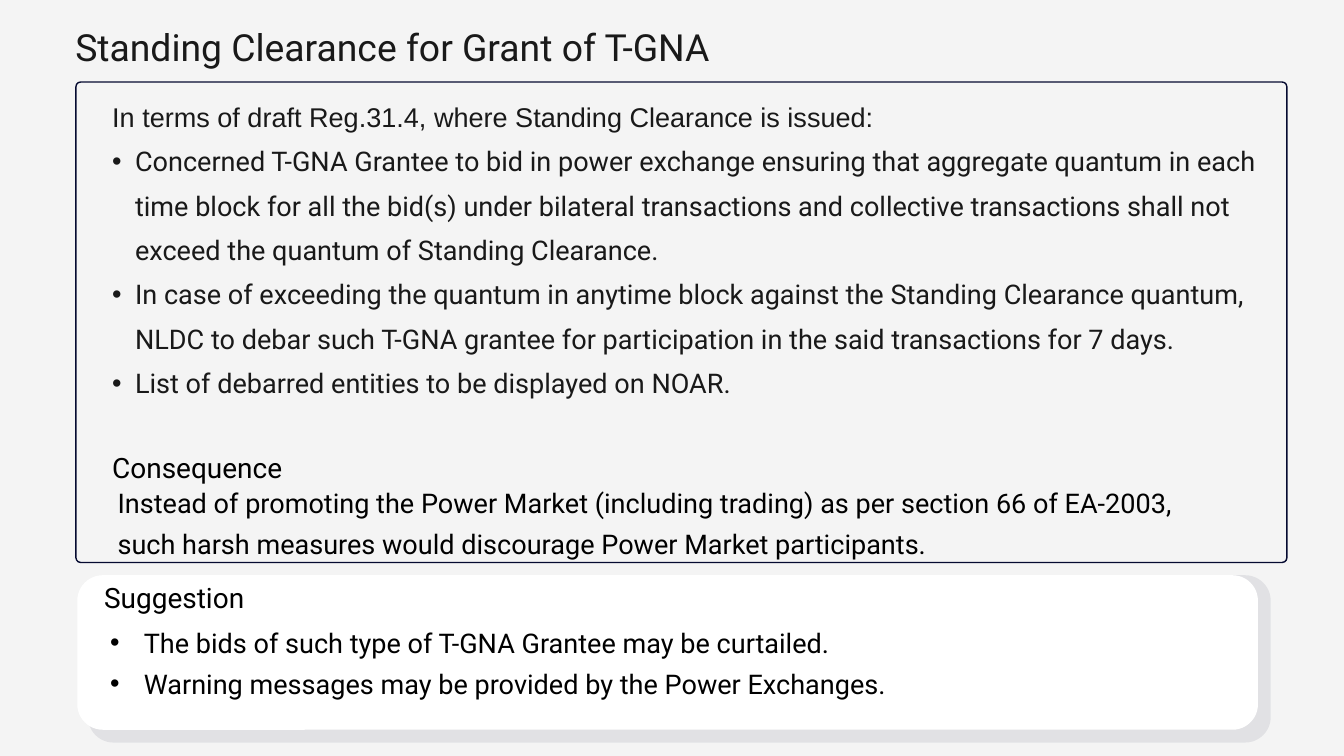
import pptx
import pptx.util
import pptx.dml.color
import pptx.enum.shapes
import pptx.enum.text
import pptx.oxml
import pptx.oxml.ns
from pptx.util import Inches

deck = pptx.Presentation()
deck.slide_width = Inches(20)
deck.slide_height = Inches(11.25)
slide = deck.slides.add_slide(deck.slide_layouts[6])


def color(hex_code):
    return pptx.dml.color.RGBColor.from_string(hex_code)


def add_text(lines, left, top, width, height, size=29, ink="000000", leading=43.5,
             fonts=("Roboto",), margin=0, hang=0, plain_lines=0):
    frame = slide.shapes.add_textbox(
        Inches(left), Inches(top), Inches(width), Inches(height)).text_frame
    frame.word_wrap = True
    frame.margin_left = frame.margin_right = frame.margin_top = frame.margin_bottom = 0
    for index, line in enumerate(lines):
        paragraph = frame.paragraphs[0] if index == 0 else frame.add_paragraph()
        paragraph.line_spacing = pptx.util.Pt(leading)
        run = paragraph.add_run()
        run.text = line
        run.font.size = pptx.util.Pt(size)
        run.font.name = fonts[min(index, len(fonts) - 1)]
        run.font.color.rgb = color(ink)
        properties = paragraph._p.get_or_add_pPr()
        if hang and index >= plain_lines:
            properties.set("marL", str(Inches(margin)))
            properties.set("indent", str(-Inches(hang)))
            for tag, key, value in (("a:buFont", "typeface", "Arial"), ("a:buChar", "char", "•")):
                bullet = pptx.oxml.ns.qn(tag)
                properties.append(properties.makeelement(bullet, {key: value}))
        elif hang:
            properties.set("marL", str(Inches(margin - hang)))
            properties.set("indent", "0")


slide.background.fill.solid()
slide.background.fill.fore_color.rgb = color("F4F4F4")

rounded = pptx.enum.shapes.MSO_SHAPE.ROUNDED_RECTANGLE
frame_box = slide.shapes.add_shape(
    rounded, Inches(1.13), Inches(1.22), Inches(18.02), Inches(7.15))
frame_box.shadow.inherit = False
frame_box.adjustments[0] = 0.01
frame_box.fill.background()
frame_box.line.color.rgb = color("050A30")
frame_box.line.width = pptx.util.Pt(1.5)

add_text([
    "In terms of draft Reg.31.4, where Standing Clearance is issued:",
    "Concerned T-GNA Grantee to bid in power exchange ensuring that aggregate quantum in each "
    "time block for all the bid(s) under bilateral transactions and collective transactions "
    "shall not exceed the quantum of Standing Clearance.",
    "In case of exceeding the quantum in anytime block against the Standing Clearance quantum, "
    "NLDC to debar such T-GNA grantee for participation in the said transactions for 7 days.",
    "List of debarred entities to be displayed on NOAR.",
], 1.33, 1.32, 17.38, 5.39, ink="191919", leading=47.5, fonts=("Arial", "Roboto"),
    margin=0.68, hang=0.34, plain_lines=1)

add_text(["Standing Clearance for Grant of T-GNA"], 1.12, 0.31, 15.59, 0.73,
         size=40, ink="191919", leading=52)

for left, width, height, tint, opacity in (
        (1.31, 17.6, 2.49, "050A30", 8), (1.15, 17.57, 2.3, "FFFFFF", 100)):
    card = slide.shapes.add_shape(
        rounded, Inches(left), Inches(8.56), Inches(width), Inches(height))
    card.shadow.inherit = False
    card.adjustments[0] = 0.38 / height
    card.line.fill.background()
    card.fill.solid()
    card.fill.fore_color.rgb = color(tint)
    if opacity < 100:
        tint_node = card._element.spPr.find(".//" + pptx.oxml.ns.qn("a:srgbClr"))
        tint_node.append(tint_node.makeelement(
            pptx.oxml.ns.qn("a:alpha"), {"val": str(opacity * 1000)}))

add_text(["Suggestion"], 1.55, 8.56, 4.53, 0.56, size=30, leading=42)
add_text([
    "Instead of promoting the Power Market (including trading) as per section 66 of EA-2003, "
    "such harsh measures would discourage Power Market participants.",
], 1.75, 7.12, 16.61, 1.17)
add_text([
    "The bids of such type of T-GNA Grantee may be curtailed.",
    "Warning messages may be provided by the Power Exchanges.",
], 1.64, 9.2, 16.61, 1.23, margin=0.5, hang=0.5)
add_text(["Consequence"], 1.67, 6.62, 4.53, 0.56, size=30, leading=42)

deck.save("out.pptx")
